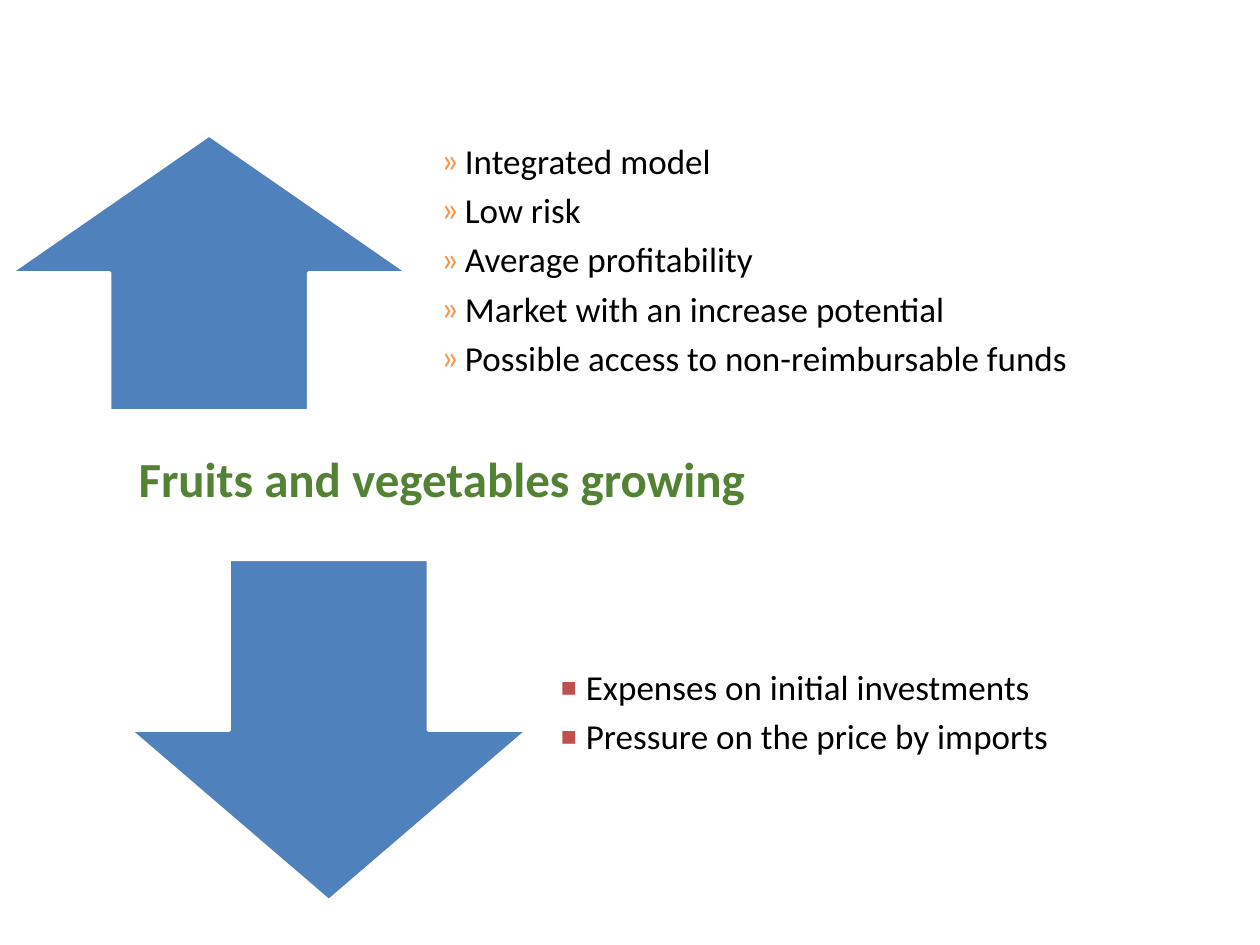
from lxml.etree import SubElement
from pptx import Presentation
from pptx.dml.color import RGBColor
from pptx.enum.shapes import MSO_SHAPE
from pptx.enum.text import MSO_ANCHOR, MSO_AUTO_SIZE, PP_ALIGN
from pptx.oxml.ns import qn
from pptx.util import Inches, Pt

ARROW_WIDTH = 3.16
LIST_SIZE = (5.37, 3.35)
LIST_GAP = 3.26  # from the left of an arrow to its list


def color(hex_str):
    return RGBColor.from_string(hex_str)


def place(sp, left, top, width, height):
    sp.left, sp.top = Inches(left), Inches(top)
    sp.width, sp.height = Inches(width), Inches(height)


def apply(obj, values):
    for name, value in values.items():
        setattr(obj, name, value)


def add_bullet(p, char, hex_str, font, indent):
    pPr = p._p.get_or_add_pPr()
    pPr.set("marL", str(Inches(indent)))
    pPr.set("indent", str(-Inches(indent)))
    clr = SubElement(pPr, qn("a:buClr"))
    SubElement(clr, qn("a:srgbClr"), val=hex_str)
    SubElement(pPr, qn("a:buFont"), typeface=font)
    SubElement(pPr, qn("a:buChar"), char=char)


def add_arrow(s, kind, left, top, height):
    sp = s.shapes.add_shape(kind, Inches(left), Inches(top), Inches(ARROW_WIDTH), Inches(height))
    sp.shadow.inherit = False
    sp.fill.solid()
    sp.fill.fore_color.rgb = color("4F81BD")
    sp.line.color.rgb = color("FFFFFF")
    sp.line.width = Pt(2)


def fill_list(sp, left, top, items, bullet):
    place(sp, left, top, *LIST_SIZE)
    tf = sp.text_frame
    apply(tf, dict(margin_left=Inches(0.16), margin_top=0, margin_right=Inches(0.16),
                   margin_bottom=Inches(0.16), vertical_anchor=MSO_ANCHOR.MIDDLE,
                   word_wrap=True, auto_size=MSO_AUTO_SIZE.NONE))
    for i, item in enumerate(items):
        p = tf.add_paragraph() if i else tf.paragraphs[0]
        apply(p, dict(line_spacing=0.9, space_before=Pt(0), space_after=Pt(6.6)))
        add_bullet(p, *bullet)
        r = p.add_run()
        r.text = item
        apply(r.font, dict(size=Pt(20), name="Calibri"))
        r.font.color.rgb = color("000000")


def fill_title(sp, text):
    place(sp, 0, 3.51, 10, 0.57)
    tf = sp.text_frame
    apply(tf, dict(margin_left=Inches(1.1), vertical_anchor=MSO_ANCHOR.TOP,
                   word_wrap=True, auto_size=MSO_AUTO_SIZE.NONE))
    p = tf.paragraphs[0]
    p.alignment = PP_ALIGN.LEFT
    r = p.add_run()
    r.text = text
    apply(r.font, dict(size=Pt(28), name="Calibri", bold=True))
    r.font.color.rgb = color("548235")


def build_slide(prs):
    s = prs.slides.add_slide(prs.slide_layouts[3])
    title, pros, cons = s.placeholders
    fill_title(title, "Fruits and vegetables growing")

    left = 0.08
    add_arrow(s, MSO_SHAPE.UP_ARROW, left, 1.07, 2.19)
    fill_list(pros, left + LIST_GAP, 0.48, [
        "Integrated model",
        "Low risk",
        "Average profitability",
        "Market with an increase potential",
        "Possible access to non-reimbursable funds",
    ], ("»", "F79646", "Calibri", 0.19))

    left = 1.03
    add_arrow(s, MSO_SHAPE.DOWN_ARROW, left, 4.44, 2.71)
    fill_list(cons, left + LIST_GAP, 4.07, [
        "Expenses on initial investments",
        "Pressure on the price by imports",
    ], ("▪", "C0504D", "TeX Gyre Schola", 0.2))


def main():
    prs = Presentation()
    prs.slide_width, prs.slide_height = Inches(10), Inches(7.5)
    build_slide(prs)
    prs.save("out.pptx")


if __name__ == "__main__":
    main()
